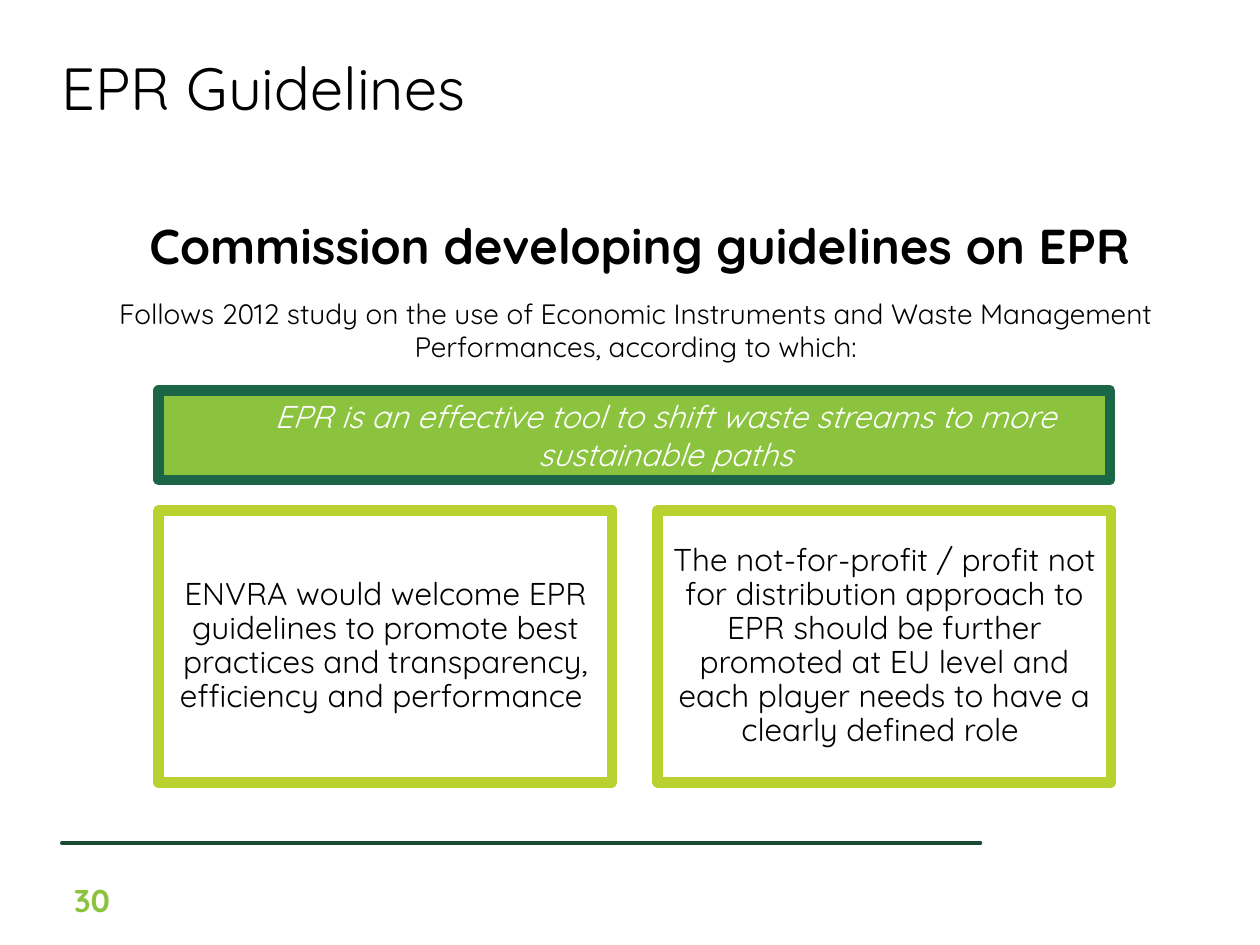
from lxml.etree import SubElement
from pptx import Presentation
from pptx.dml.color import RGBColor
from pptx.enum.shapes import MSO_CONNECTOR, MSO_SHAPE
from pptx.enum.text import MSO_ANCHOR, PP_ALIGN
from pptx.oxml.ns import qn
from pptx.util import Pt

COLORS = {
    "text": "000000", "white": "FFFFFF", "green": "8BC33E",
    "banner_edge": "1B6647", "card_edge": "B9D230", "rule": "1A4B33",
}
FONT = "Quicksand"
INDENT = 35.3


def rgb(name):
    """Return the named colour."""
    return RGBColor.from_string(COLORS[name])


def write(shape, text, size, color="text", align=PP_ALIGN.CENTER, anchor=MSO_ANCHOR.TOP,
          margins=(7.2, 3.6), bold=False, italic=False, indent=0, spacing=None):
    """Fill a shape with one styled paragraph."""
    tf = shape.text_frame
    tf.word_wrap = True
    tf.vertical_anchor = anchor
    tf.margin_left = tf.margin_right = Pt(margins[0])
    tf.margin_top = tf.margin_bottom = Pt(margins[1])
    p = tf.paragraphs[0]
    p.text = text
    p.alignment = align
    if spacing:
        p.line_spacing = spacing
    if indent:
        pPr = p._p.get_or_add_pPr()
        pPr.set("marL", str(Pt(indent)))
        pPr.set("indent", "0")
    font = p.font
    font.name, font.size, font.bold, font.italic = FONT, Pt(size), bold, italic
    font.color.rgb = rgb(color)


def add_text(s, box, text, size, **style):
    """Add a text box."""
    write(s.shapes.add_textbox(*map(Pt, box)), text, size, **style)


def add_frame(s, box, fill, edge, text, **style):
    """Add a filled rectangle with a thick round-cornered outline and text."""
    sp = s.shapes.add_shape(MSO_SHAPE.RECTANGLE, *map(Pt, box))
    sp.shadow.inherit = False
    sp.fill.solid()
    sp.fill.fore_color.rgb = rgb(fill)
    sp.line.color.rgb = rgb(edge)
    sp.line.width = Pt(6)
    SubElement(sp.line._get_or_add_ln(), qn("a:round"))
    write(sp, text, 18, **style)


def add_heading(s, left, top, width):
    """Add the slide title, the headline and its introduction."""
    add_text(s, (left, top, width, 99.4), "EPR Guidelines", 34, align=PP_ALIGN.LEFT,
             anchor=MSO_ANCHOR.MIDDLE, margins=(0, 0))
    add_text(s, (left + 24.5, top + 119.5, 611.3, 41), "Commission developing guidelines on EPR",
             28, bold=True)
    add_text(s, (left - 3.6, top + 169.2, 627.8, 50),
             "Follows 2012 study on the use of Economic Instruments and Waste Management "
             "Performances, according to which:", 16, margins=(0, 0), indent=INDENT)


def add_messages(s, left, top, width):
    """Add the banner and the row of cards below it."""
    add_frame(s, (left, top, width, 51.1), "green", "banner_edge",
              "EPR is an effective tool to shift waste streams to more sustainable paths",
              color="white", italic=True, indent=INDENT)
    cards = [
        "ENVRA would welcome EPR guidelines to promote best practices and transparency, "
        "efficiency and performance ",
        "The not-for-profit / profit not for distribution approach to EPR should be further "
        "promoted at EU level and each player needs to have a clearly defined role ",
    ]
    card_width, gap = 259.2, 25.9
    for i, text in enumerate(cards):
        box = (left + i * (card_width + gap), top + 68.4, card_width, 155.5)
        add_frame(s, box, "white", "card_edge", text, anchor=MSO_ANCHOR.MIDDLE,
                  margins=(5, 5), spacing=0.9)


def add_footer(s, left, top, width):
    """Add the rule and the page number."""
    rule = s.shapes.add_connector(MSO_CONNECTOR.STRAIGHT, Pt(left), Pt(top),
                                  Pt(left + width), Pt(top))
    rule.line.color.rgb = rgb("rule")
    rule.line.width = Pt(2)
    rule.line._get_or_add_ln().set("cap", "rnd")
    SubElement(rule._element.spPr, qn("a:effectLst"))
    add_text(s, (left, top + 18, 43.9, 28.8), "30", 18, color="green",
             align=PP_ALIGN.LEFT, bold=True)


def main():
    """Build and save the slide."""
    prs = Presentation()
    prs.slide_width, prs.slide_height = Pt(720), Pt(540)
    s = prs.slides.add_slide(prs.slide_layouts[6])
    add_footer(s, 35.3, 481.7, 525)
    add_heading(s, 35.3, 0, 652.3)
    add_messages(s, 90.7, 223.2, 543.6)
    prs.save("out.pptx")


if __name__ == "__main__":
    main()
